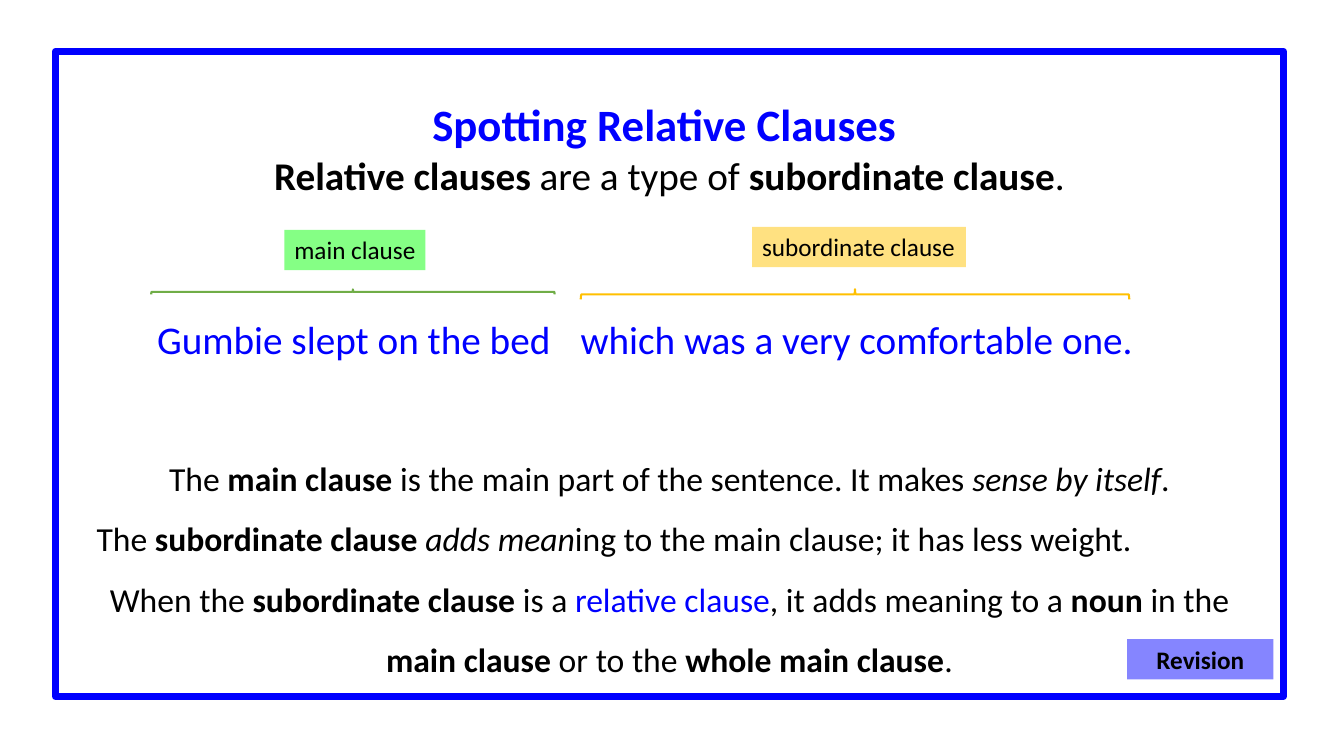
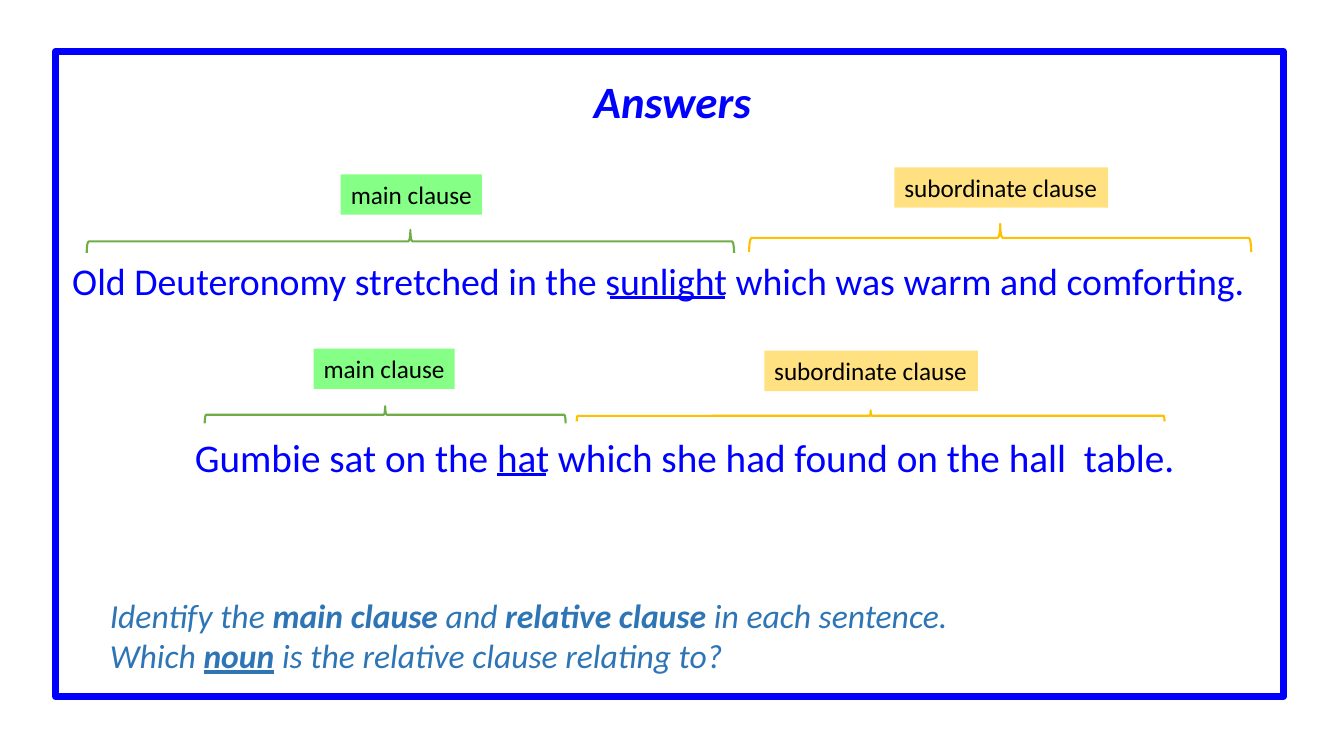
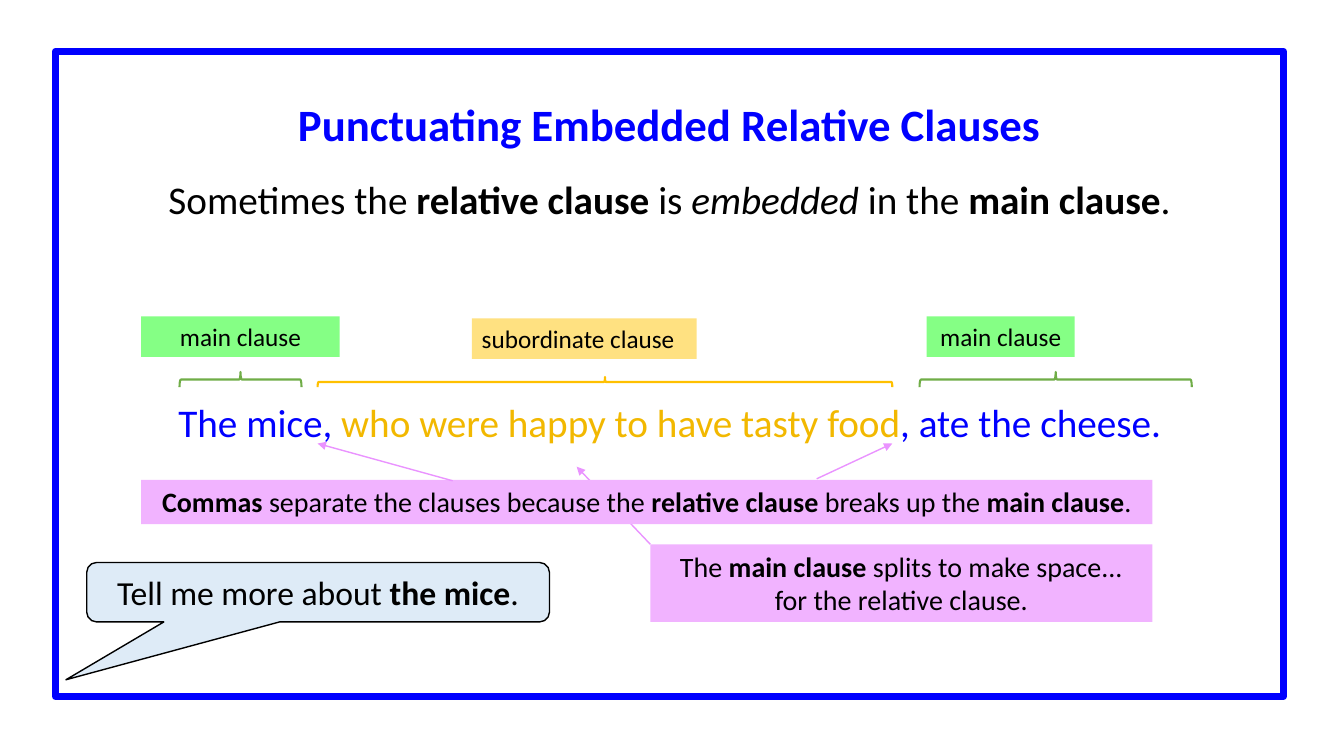
from lxml import etree
from pptx import Presentation, util as u
from pptx.dml.color import RGBColor
from pptx.enum import shapes, text
from pptx.oxml.ns import qn

# Shared look
FONT = "Calibri"
BLUE, BLACK, GOLD, TASK_BLUE = "0000FF", "000000", "F2B800", "2E75B6"
PINK, PINK_LINE, SKY, VIOLET = "F1B3FF", "EA93FF", "DEEBF7", "8585FF"
# label text, label fill, brace colour, centred, (left inset, right inset)
CLAUSES = {
    "main": ("main clause", "85FF85", "70AD47", True, (0.05, 0.05)),
    "sub": ("subordinate clause", "FFE181", "FFC000", False, (0.1, 0)),
}
B, I = {"bold": True}, {"italic": True}

# Content: a paragraph is a list of runs, a run is text or (text, format)
# Clause marks: (kind, label left/top/width, brace left/top/width/depth)
SPOTTING = {
    "title": ("Spotting Relative Clauses ", 0.91),
    "intro": ([("Relative clauses ", B), "are a type of ",
               ("subordinate clause", B), "."], 1.45),
    "marks": [
        ("main", (2.82, 2.28, 1.4), (1.5, 2.87, 4, 0.05)),
        ("sub", (7.46, 2.25, 2.12), (5.76, 2.87, 5.44, 0.1)),
    ],
}
CLAUSE_RULES = [
    (["The ", ("main clause ", B), "is the main part of the sentence. It makes ",
      ("sense by itself", I), "."], True),
    (["The ", ("subordinate clause ", B), ("adds mean", I),
      "ing to the main clause; it has less weight."], False),
    (["When the ", ("subordinate clause", B), " is a ",
      ("relative clause", {"color": BLUE}), ", it adds meaning to a ",
      ("noun", B), " in the ", ("main clause ", B), "or to the ",
      ("whole main clause", B), "."], True),
]
ANSWERS = {
    "title": ("Answers", 0.68),
    "marks": [
        ("main", (3.38, 1.73, 1.4), (0.86, 2.28, 6.42, 0.23)),
        ("sub", (8.87, 1.66, 2.12), (7.43, 2.22, 4.98, 0.28)),
        ("main", (3.11, 3.46, 1.4), (2.03, 4.03, 3.58, 0.17)),
        ("sub", (7.58, 3.48, 2.12), (5.72, 4.07, 5.83, 0.11)),
    ],
}
# sentence, box, size, noun underline (left, right, y)
ANSWER_SENTENCES = [
    ("Old Deuteronomy stretched in the sunlight which was warm and comforting.",
     (0.34, 2.51, 12.38, 0.57), 27, (6.05, 7.19, 2.95)),
    ("Gumbie sat on the hat which she had found on the hall  table.",
     (1.73, 4.25, 10.12, 0.57), 28, (4.93, 5.42, 4.71)),
]
TASK = [
    ["Identify the ", ("main clause ", B), "and ", ("relative clause", B),
     " in each sentence."],
    ["Which ", ("noun", {"bold": True, "underline": True}),
     " is the relative clause relating to?"],
]
EMBEDDED = {
    "title": ("Punctuating Embedded Relative Clauses", 0.91),
    "intro": (["Sometimes the ", ("relative clause ", B), "is ", ("embedded", I),
               " in the ", ("main clause", B), "."], 1.69),
    "marks": [
        ("main", (1.4, 3.14, 1.97), (1.78, 3.69, 1.21, 0.15)),
        ("sub", (4.68, 3.16, 2.23), (3.15, 3.74, 5.7, 0.1)),
        ("main", (9.19, 3.14, 1.47), (9.12, 3.69, 2.7, 0.15)),
    ],
}
MICE = ["The mice, ", ("who were happy to have tasty food", {"color": GOLD}),
        ", ate the cheese."]
SPLIT_NOTE = [["The ", ("main clause ", B), "splits to make space..."],
              ["for the relative clause."]]
COMMA_NOTE = [[("Commas", B), " separate the clauses because the ",
               ("relative clause ", B), "breaks up the ", ("main clause", B), "."]]
SPLIT_ARROW = ((6.45, 5.4), (5.72, 4.63))
COMMA_ARROWS = [((4.49, 4.77), (3.15, 4.4)), ((8.1, 4.75), (8.85, 4.4))]
MORE = [["Tell me more about ", ("the mice", B), "."]]


def rgb(color):
    return RGBColor.from_string(color)


def write(sp, paragraphs, size=28, color=BLACK, bold=False, italic=False,
          center=True, spacing=None, wrap=True, insets=(0.1, 0.1), middle=False):
    """Fill a shape with formatted paragraphs."""
    tf = sp.text_frame
    tf.word_wrap = wrap
    tf.margin_left, tf.margin_right = map(u.Inches, insets)
    tf.vertical_anchor = text.MSO_ANCHOR.MIDDLE if middle else text.MSO_ANCHOR.TOP
    for n, runs in enumerate(paragraphs):
        p = tf.add_paragraph() if n else tf.paragraphs[0]
        centered = center[n] if isinstance(center, list) else center
        p.alignment = text.PP_ALIGN.CENTER if centered else text.PP_ALIGN.LEFT
        if spacing:
            p.line_spacing = spacing
        for run in runs:
            words, fmt = (run, {}) if isinstance(run, str) else run
            r = p.add_run()
            r.text = words
            r.font.name, r.font.size = FONT, u.Pt(size)
            r.font.bold = fmt.get("bold", bold)
            r.font.italic = fmt.get("italic", italic)
            r.font.underline = fmt.get("underline", False)
            r.font.color.rgb = rgb(fmt.get("color", color))


def textbox(s, box, paragraphs, **fmt):
    write(s.shapes.add_textbox(*map(u.Inches, box)), paragraphs, **fmt)


def shape(s, kind, box, fill=None, line=None, width=1):
    sp = s.shapes.add_shape(kind, *map(u.Inches, box))
    sp.shadow.inherit = False
    if fill:
        sp.fill.solid()
        sp.fill.fore_color.rgb = rgb(fill)
    else:
        sp.fill.background()
    if line:
        sp.line.color.rgb = rgb(line)
        sp.line.width = u.Pt(width)
    else:
        sp.line.fill.background()
    return sp


def panel(s, box, paragraphs, fill, **fmt):
    write(shape(s, shapes.MSO_SHAPE.RECTANGLE, box, fill), paragraphs, **fmt)


def connector(s, start, end, color, width=1, arrow=False):
    c = s.shapes.add_connector(shapes.MSO_CONNECTOR.STRAIGHT,
                               *map(u.Inches, (*start, *end)))
    c.line.color.rgb = rgb(color)
    c.line.width = u.Pt(width)
    if arrow:
        etree.SubElement(c.line._get_or_add_ln(), qn("a:tailEnd"), type="triangle")
    etree.SubElement(c._element.spPr, qn("a:effectLst"))


def clause_mark(s, kind, label, brace):
    """A coloured label above a brace that opens downwards."""
    name, fill, line, center, insets = CLAUSES[kind]
    left, top, width, depth = brace
    # The brace is drawn upright about its centre, then turned
    upright = (left + (width - depth) / 2, top + (depth - width) / 2, depth, width)
    shape(s, shapes.MSO_SHAPE.LEFT_BRACE, upright, line=line, width=1.5).rotation = 90
    panel(s, (*label, 0.4), [[name]], fill, size=18, center=center, insets=insets)


def new_slide(prs, content, italic=False):
    """Blue frame, title, optional introduction and clause marks."""
    s = prs.slides.add_slide(prs.slide_layouts[6])
    shape(s, shapes.MSO_SHAPE.RECTANGLE, (0.55, 0.51, 12.18, 6.4), line=BLUE, width=5)
    title, top = content["title"]
    box = (5.71, top, 1.92, 0.64) if italic else (0.86, top, 11.56, 0.64)
    textbox(s, box, [[title]], size=32, color=BLUE, bold=True, italic=italic)
    if "intro" in content:
        runs, top = content["intro"]
        textbox(s, (0.86, top, 11.56, 0.57), [runs])
    for mark in content["marks"]:
        clause_mark(s, *mark)
    return s


def spotting_slide(prs):
    s = new_slide(prs, SPOTTING)
    textbox(s, (1.46, 3.08, 4.3, 0.57), [["Gumbie slept on the bed"]],
            color=BLUE, center=False)
    textbox(s, (5.66, 3.08, 5.95, 0.57), [["which was a very comfortable one."]],
            color=BLUE, center=False)
    textbox(s, (0.86, 4.29, 11.56, 2.52), [runs for runs, _ in CLAUSE_RULES],
            size=24, spacing=1.5, center=[c for _, c in CLAUSE_RULES])
    panel(s, (11.18, 6.34, 1.45, 0.4), [["Revision"]], VIOLET, size=18, bold=True)


def answers_slide(prs):
    s = new_slide(prs, ANSWERS, italic=True)
    for sentence, box, size, (left, right, y) in ANSWER_SENTENCES:
        textbox(s, box, [[sentence]], size=size, color=BLUE, wrap=False)
        connector(s, (left, y), (right, y), BLUE, 2.25)
    textbox(s, (0.99, 5.85, 10.88, 0.91), TASK, size=24, color=TASK_BLUE,
            italic=True, center=False)


def embedded_slide(prs):
    s = new_slide(prs, EMBEDDED)
    textbox(s, (1.67, 3.9, 10.21, 0.57), [MICE], color=BLUE, center=False)
    # Speech bubble
    bubble = shape(s, shapes.MSO_SHAPE.ROUNDED_RECTANGULAR_CALLOUT,
                   (0.86, 5.58, 4.59, 0.59), SKY, BLACK)
    for n, value in enumerate((-0.545, 1.472, 0.167)):
        bubble.adjustments[n] = value
    write(bubble, MORE, size=24, middle=True)
    # Notes; the first arrow passes behind the comma note
    panel(s, (6.45, 5.4, 4.98, 0.77), SPLIT_NOTE, PINK, size=20)
    connector(s, *SPLIT_ARROW, PINK_LINE, arrow=True)
    panel(s, (1.4, 4.76, 10.03, 0.44), COMMA_NOTE, PINK, size=20)
    for start, end in COMMA_ARROWS:
        connector(s, start, end, PINK_LINE, arrow=True)


def main():
    prs = Presentation()
    prs.slide_width, prs.slide_height = u.Inches(13.33), u.Inches(7.5)
    for build in (spotting_slide, answers_slide, embedded_slide):
        build(prs)
    prs.save("out.pptx")


if __name__ == "__main__":
    main()
